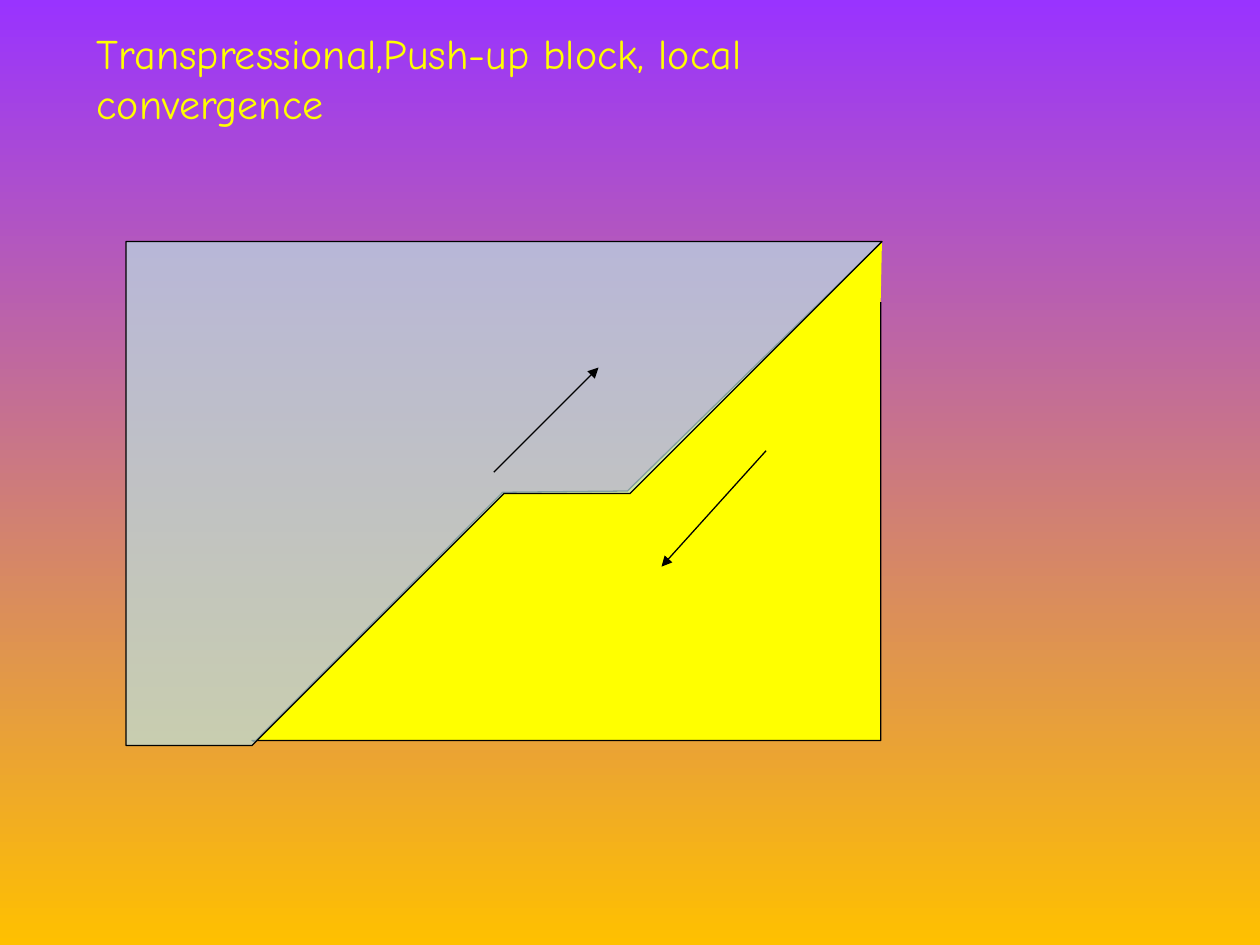
from dataclasses import dataclass
from lxml import etree
from pptx import Presentation
from pptx import util as u
from pptx.dml import color
from pptx.enum import shapes, text
from pptx.oxml import ns


@dataclass(frozen=True)
class Theme:
    sky: str = "9933FF"
    ground: str = "FFC000"
    lower_block: str = "FFFF00"
    upper_block: str = "BBE0E3"
    upper_opacity: int = 70
    outline: str = "000000"
    outline_width: float = 0.75
    title: str = "FFFF00"
    title_size: int = 24
    font: str = "Comic Neue"


THEME = Theme()
rgb = color.RGBColor.from_string

LOWER_BLOCK = [(6, 0), (3.98, 1.98), (2.99, 1.99), (1.02, 3.97), (1, 3.96), (5.99, 3.96), (5.99, 0.48)]
UPPER_BLOCK = [(1, 4), (0, 4), (0, 0), (6, 0), (4, 2), (3, 2)]
SLIP_ARROWS = [((2.92, 1.83), (3.75, 1)), ((5.08, 1.66), (4.25, 2.58))]
GRID_COLUMNS = 6


def apply_format(target, values):
    for name, value in values.items():
        setattr(target, name, value)


def set_outline(line):
    line.color.rgb = rgb(THEME.outline)
    line.width = u.Pt(THEME.outline_width)


def paint_background(slide):
    fill = slide.background.fill
    fill.gradient()
    fill.gradient_angle = 270
    for stop, shade in zip(fill.gradient_stops, (THEME.sky, THEME.ground)):
        stop.color.rgb = rgb(shade)


def add_title(slide, left, top, width, height, wording):
    frame = slide.shapes.add_textbox(left, top, width, height).text_frame
    apply_format(frame, {"word_wrap": True, "auto_size": text.MSO_AUTO_SIZE.SHAPE_TO_FIT_TEXT})
    run = frame.paragraphs[0].add_run()
    run.text = wording
    apply_format(run.font, {"name": THEME.font, "size": u.Pt(THEME.title_size)})
    run.font.color.rgb = rgb(THEME.title)


def add_block(slide, points, shade, closed):
    builder = slide.shapes.build_freeform(*points[0])
    builder.add_line_segments(points[1:], close=closed)
    block = builder.convert_to_shape()
    block.shadow.inherit = False
    block.fill.solid()
    block.fill.fore_color.rgb = rgb(shade)
    set_outline(block.line)
    return block


def set_opacity(shape, percent):
    shade = shape.fill._xPr.find(ns.qn("a:solidFill"))[0]
    etree.SubElement(shade, ns.qn("a:alpha"), val=str(percent * 1000))


def add_slip_arrow(slide, start, end):
    arrow = slide.shapes.add_connector(shapes.MSO_CONNECTOR.STRAIGHT, *start, *end)
    set_outline(arrow.line)
    properties = arrow._element.spPr
    etree.SubElement(properties.find(ns.qn("a:ln")), ns.qn("a:tailEnd"), type="triangle")
    etree.SubElement(properties, ns.qn("a:effectLst"))


def add_fault_diagram(slide, left, top, width):
    unit = width / GRID_COLUMNS

    def place(point):
        return round(left + point[0] * unit), round(top + point[1] * unit)

    add_block(slide, [place(p) for p in LOWER_BLOCK], THEME.lower_block, False)
    upper = add_block(slide, [place(p) for p in UPPER_BLOCK], THEME.upper_block, True)
    set_opacity(upper, THEME.upper_opacity)
    for start, end in SLIP_ARROWS:
        add_slip_arrow(slide, place(start), place(end))


def main():
    deck = Presentation()
    apply_format(deck, {"slide_width": u.Cm(25.4), "slide_height": u.Cm(19.05)})
    slide = deck.slides.add_slide(deck.slide_layouts[6])
    paint_background(slide)
    add_fault_diagram(slide, u.Cm(2.54), u.Cm(4.87), u.Cm(15.24))
    add_title(slide, u.Cm(1.7), u.Cm(0.43), u.Cm(17.98), u.Cm(2.29),
              "Transpressional,Push-up block, local convergence")
    deck.save("out.pptx")


if __name__ == "__main__":
    main()
